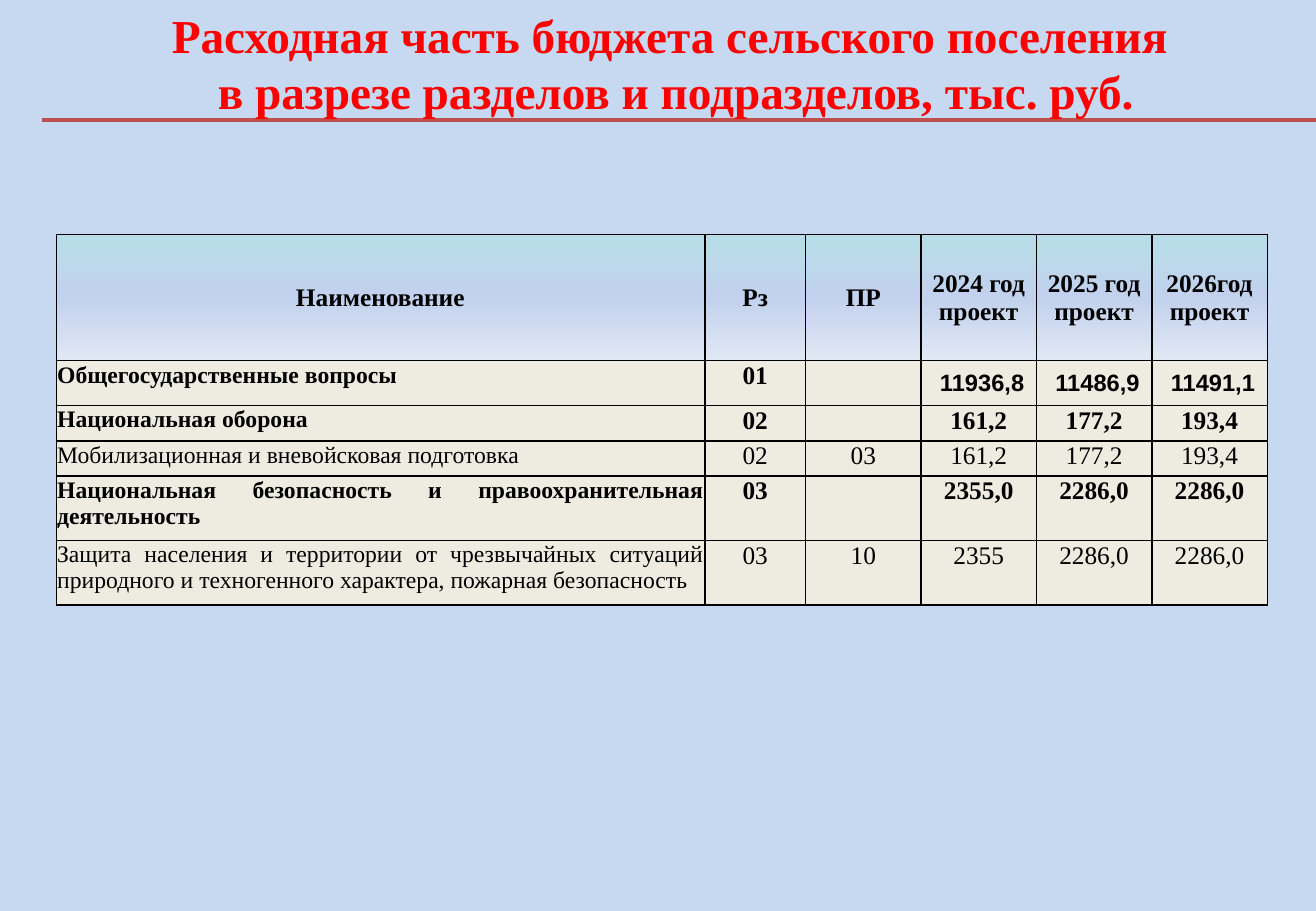
from dataclasses import dataclass

from lxml.etree import SubElement
from pptx import Presentation
from pptx.dml.color import RGBColor
from pptx.enum.shapes import MSO_CONNECTOR
from pptx.enum.text import MSO_ANCHOR, MSO_AUTO_SIZE, PP_ALIGN
from pptx.oxml.ns import qn
from pptx.slide import Slide
from pptx.table import _Cell
from pptx.text.text import _Paragraph
from pptx.util import Emu, Inches, Pt


@dataclass(frozen=True)
class Theme:
    background: str = "C6D9F1"
    title: str = "FF0000"
    rule: str = "C0504D"
    ink: str = "000000"
    body_fill: str = "EEECE1"
    header_stops: tuple[str, ...] = ("B7DEE8", "C2D1ED", "E1E8F5")
    serif: str = "Times New Roman"
    sans: str = "Arial"
    title_size: int = 28
    value_size: int = 15
    name_size: int = 14
    rule_width: float = 2.5


@dataclass(frozen=True)
class CellStyle:
    size: int
    bold: bool
    align: PP_ALIGN
    font: str
    anchor: MSO_ANCHOR = MSO_ANCHOR.TOP
    margins: tuple[float, ...] = (0.01, 0.01, 0.01, 0)


@dataclass(frozen=True)
class BudgetRow:
    height: float
    texts: tuple[str, ...]
    bold: bool = True
    totals: bool = False


THEME = Theme()
SLIDE_WIDTH, SLIDE_HEIGHT = Inches(10.83), Inches(7.5)
GRID_COUNT = 100
COLUMN_WIDTHS = (49.31, 7.66, 8.77, 8.77, 8.77, 8.77)
VERTICAL_BORDERS = (0.5, 1, 0.5, 1, 0.5, 1, 0.5)
HORIZONTAL_BORDERS = (0.5, 1, 0.5, 1, 1, 1, 1)
TITLE_LINES = (
    "Расходная часть бюджета сельского поселения ",
    "в разрезе разделов и подразделов, тыс. руб.",
)
BUDGET_ROWS = (
    BudgetRow(13.87, ("Наименование", "Рз", "ПР", "2024 год\nпроект",
                      "2025 год\nпроект", "2026год\nпроект")),
    BudgetRow(4.93, ("Общегосударственные вопросы", "01", "",
                     "11936,8", "11486,9", "11491,1"), totals=True),
    BudgetRow(3.87, ("Национальная оборона", "02", "", "161,2", "177,2", "193,4")),
    BudgetRow(3.87, ("Мобилизационная и вневойсковая подготовка", "02", "03",
                     "161,2", "177,2", "193,4"), bold=False),
    BudgetRow(7.07, ("Национальная безопасность и правоохранительная деятельность",
                     "03", "", "2355,0", "2286,0", "2286,0")),
    BudgetRow(7.07, ("Защита населения и территории от чрезвычайных ситуаций природного "
                     "и техногенного характера, пожарная безопасность",
                     "03", "10", "2355", "2286,0", "2286,0"), bold=False),
)


def across(columns: float) -> Emu:
    return Emu(round(SLIDE_WIDTH * columns / GRID_COUNT))


def down(rows: float) -> Emu:
    return Emu(round(SLIDE_HEIGHT * rows / GRID_COUNT))


def add_span(para: _Paragraph, text: str, size: int, font: str, color: str, bold: bool) -> None:
    span = para.add_run()
    span.text = text
    span.font.size = Pt(size)
    span.font.name = font
    span.font.bold = bold
    span.font.color.rgb = RGBColor.from_string(color)


def draw_rule(page: Slide) -> None:
    rule = page.shapes.add_connector(
        MSO_CONNECTOR.STRAIGHT, across(3.23), down(13.2), across(GRID_COUNT), down(13.2))
    rule.line.color.rgb = RGBColor.from_string(THEME.rule)
    rule.line.width = Pt(THEME.rule_width)
    SubElement(rule._element.spPr, qn("a:effectLst"))


def draw_title(page: Slide) -> None:
    box = page.shapes.add_textbox(across(4.89), 0, across(92.89), down(13.87))
    frame = box.text_frame
    frame.word_wrap = True
    frame.auto_size = MSO_AUTO_SIZE.SHAPE_TO_FIT_TEXT
    para = frame.paragraphs[0]
    para.alignment = PP_ALIGN.CENTER
    for index, line in enumerate(TITLE_LINES):
        if index:
            para.add_line_break()
        add_span(para, line, THEME.title_size, THEME.serif, THEME.title, True)


def style_for(row_index: int, column_index: int) -> CellStyle:
    row = BUDGET_ROWS[row_index]
    if row_index == 0:
        return CellStyle(THEME.value_size, True, PP_ALIGN.CENTER, THEME.serif,
                         MSO_ANCHOR.MIDDLE, (0.09, 0.08, 0.09, 0.08))
    if column_index == 0:
        return CellStyle(THEME.name_size, row.bold, PP_ALIGN.JUSTIFY, THEME.serif)
    if row.totals and column_index > 2:
        return CellStyle(THEME.name_size, True, PP_ALIGN.RIGHT, THEME.sans,
                         MSO_ANCHOR.MIDDLE, (0.1, 0.05, 0.1, 0.05))
    return CellStyle(THEME.value_size, row.bold, PP_ALIGN.CENTER, THEME.serif)


def write_cell(cell: _Cell, text: str, style: CellStyle) -> None:
    cell.vertical_anchor = style.anchor
    left, top, right, bottom = map(Inches, style.margins)
    cell.margin_left, cell.margin_top = left, top
    cell.margin_right, cell.margin_bottom = right, bottom
    frame = cell.text_frame
    for index, line in enumerate(text.split("\n")):
        para = frame.add_paragraph() if index else frame.paragraphs[0]
        para.alignment = style.align
        if line:
            add_span(para, line, style.size, style.font, THEME.ink, style.bold)
        else:
            SubElement(para._p, qn("a:endParaRPr"), sz=str(Pt(style.size).centipoints))


def border_cell(cell: _Cell, row_index: int, column_index: int) -> None:
    widths = {
        "a:lnL": VERTICAL_BORDERS[column_index],
        "a:lnR": VERTICAL_BORDERS[column_index + 1],
        "a:lnT": HORIZONTAL_BORDERS[row_index],
        "a:lnB": HORIZONTAL_BORDERS[row_index + 1],
    }
    properties = cell._tc.get_or_add_tcPr()
    for tag, width in widths.items():
        border = SubElement(properties, qn(tag), w=str(Pt(width)))
        SubElement(SubElement(border, qn("a:solidFill")), qn("a:srgbClr"), val=THEME.ink)


def fill_cell(cell: _Cell, is_header: bool) -> None:
    if not is_header:
        cell.fill.solid()
        cell.fill.fore_color.rgb = RGBColor.from_string(THEME.body_fill)
        return
    gradient = SubElement(cell._tc.get_or_add_tcPr(), qn("a:gradFill"), rotWithShape="1")
    stops = SubElement(gradient, qn("a:gsLst"))
    for index, color in enumerate(THEME.header_stops):
        stop = SubElement(stops, qn("a:gs"), pos=str(index * 50000))
        SubElement(stop, qn("a:srgbClr"), val=color)
    SubElement(gradient, qn("a:lin"), ang="5400000", scaled="0")


def draw_budget(page: Slide) -> None:
    table = page.shapes.add_table(
        len(BUDGET_ROWS), len(COLUMN_WIDTHS), across(4.25), down(25.73),
        across(sum(COLUMN_WIDTHS)), down(sum(row.height for row in BUDGET_ROWS))).table
    table.first_row = False
    table.horz_banding = False
    for column, width in zip(table.columns, COLUMN_WIDTHS):
        column.width = across(width)
    for row_index, row in enumerate(BUDGET_ROWS):
        table.rows[row_index].height = down(row.height)
        for column_index, text in enumerate(row.texts):
            cell = table.cell(row_index, column_index)
            write_cell(cell, text, style_for(row_index, column_index))
            border_cell(cell, row_index, column_index)
            fill_cell(cell, row_index == 0)


def main() -> None:
    deck = Presentation()
    deck.slide_width, deck.slide_height = SLIDE_WIDTH, SLIDE_HEIGHT
    page = deck.slides.add_slide(deck.slide_layouts[6])
    page.background.fill.solid()
    page.background.fill.fore_color.rgb = RGBColor.from_string(THEME.background)
    draw_rule(page)
    draw_title(page)
    draw_budget(page)
    deck.save("out.pptx")


if __name__ == "__main__":
    main()
